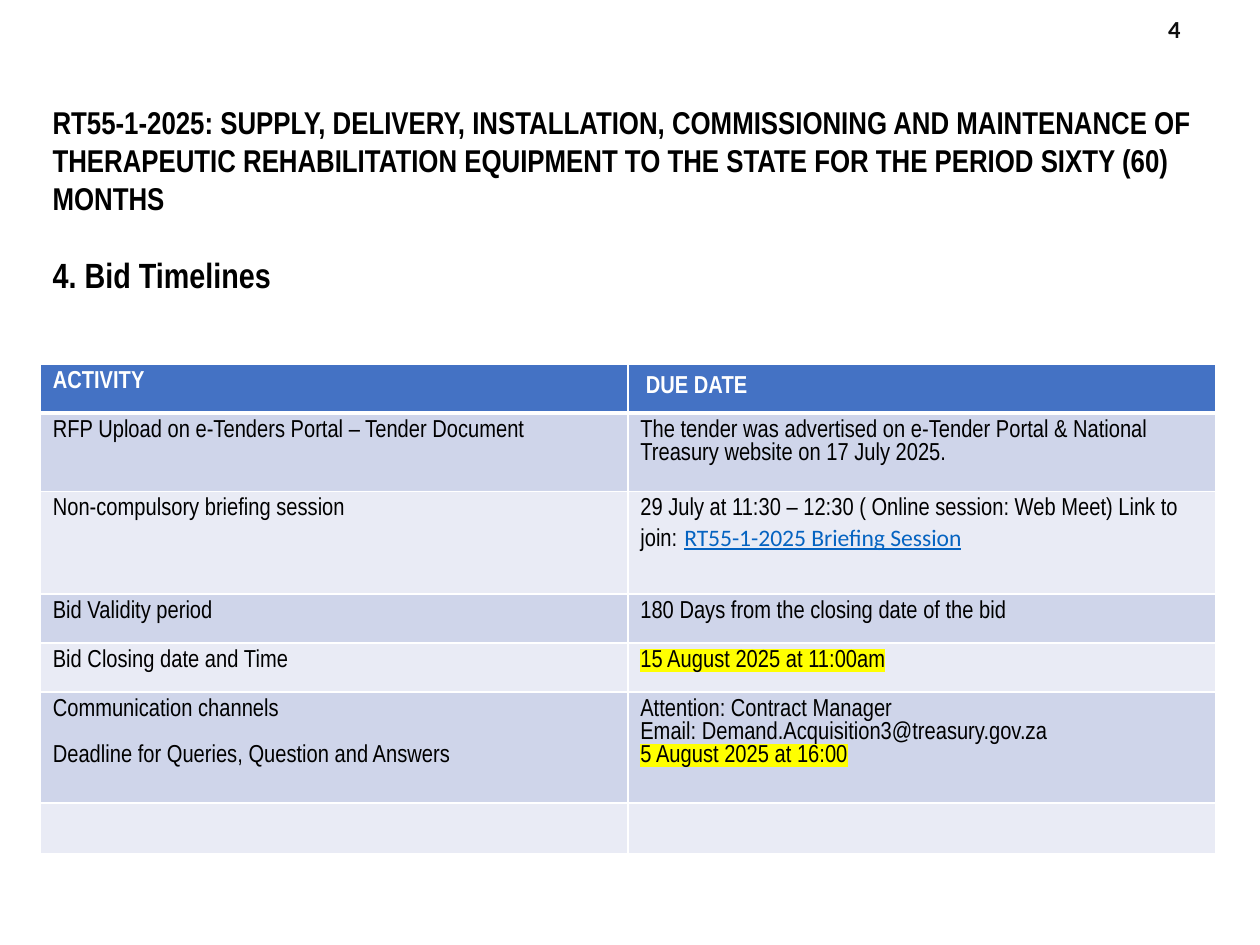
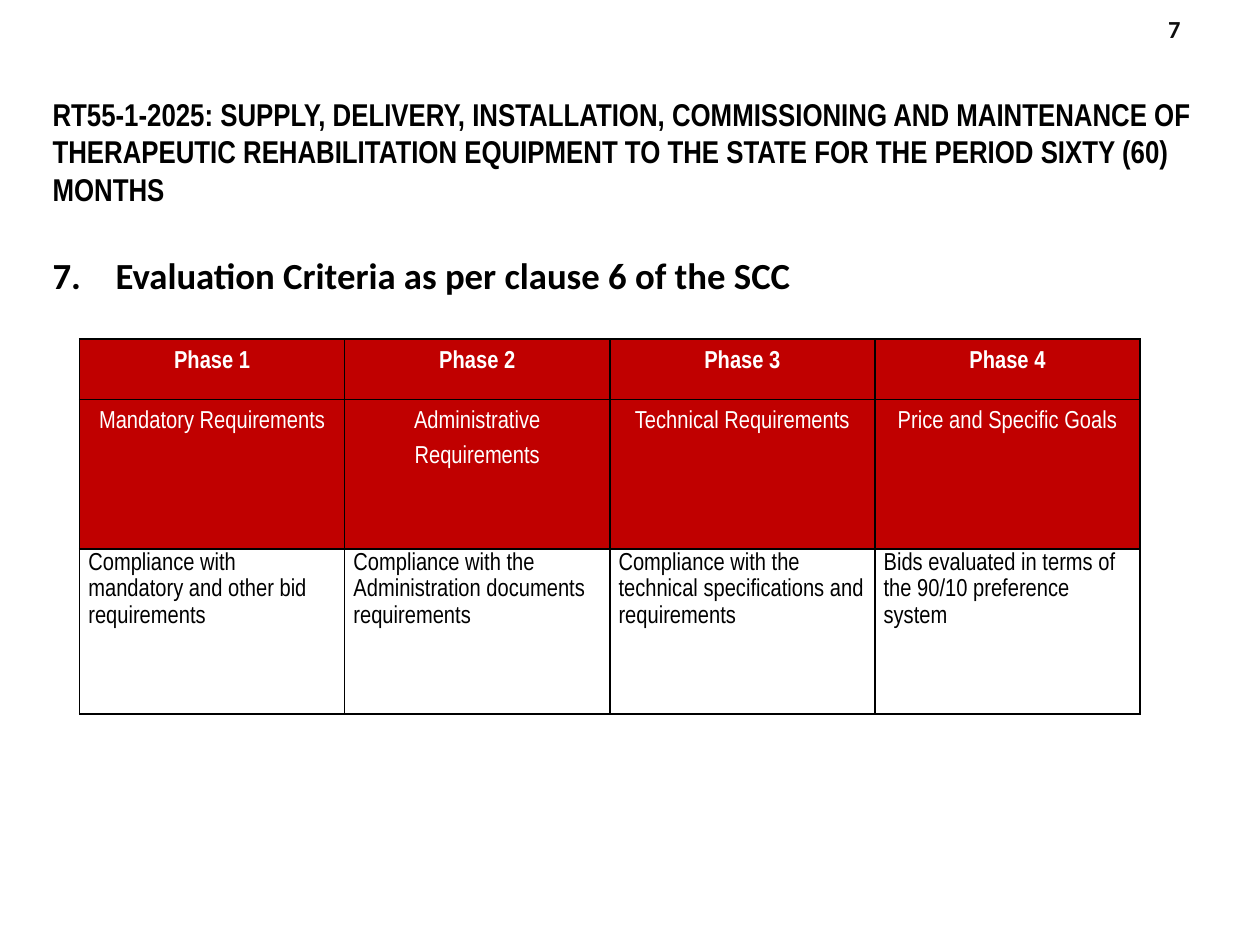
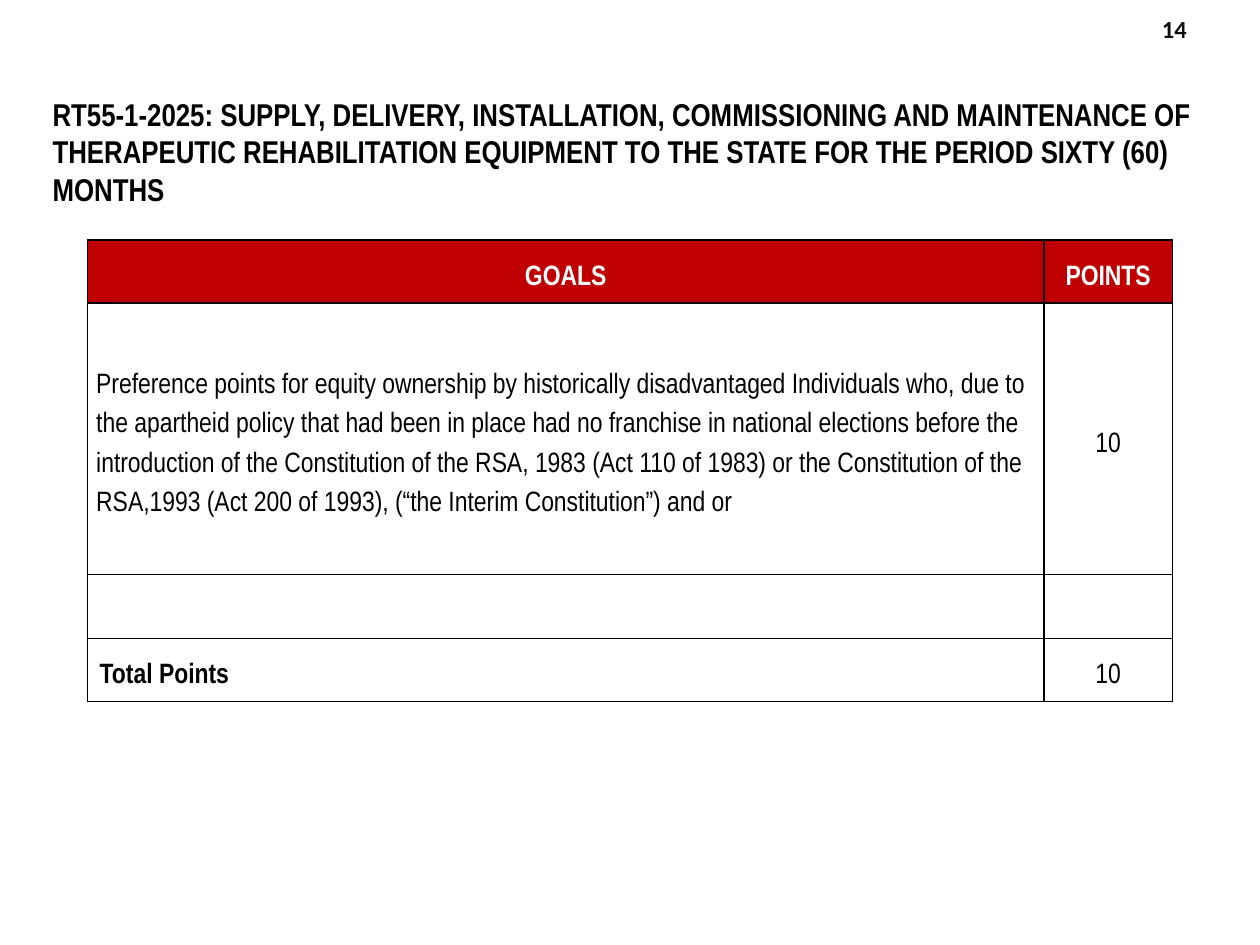
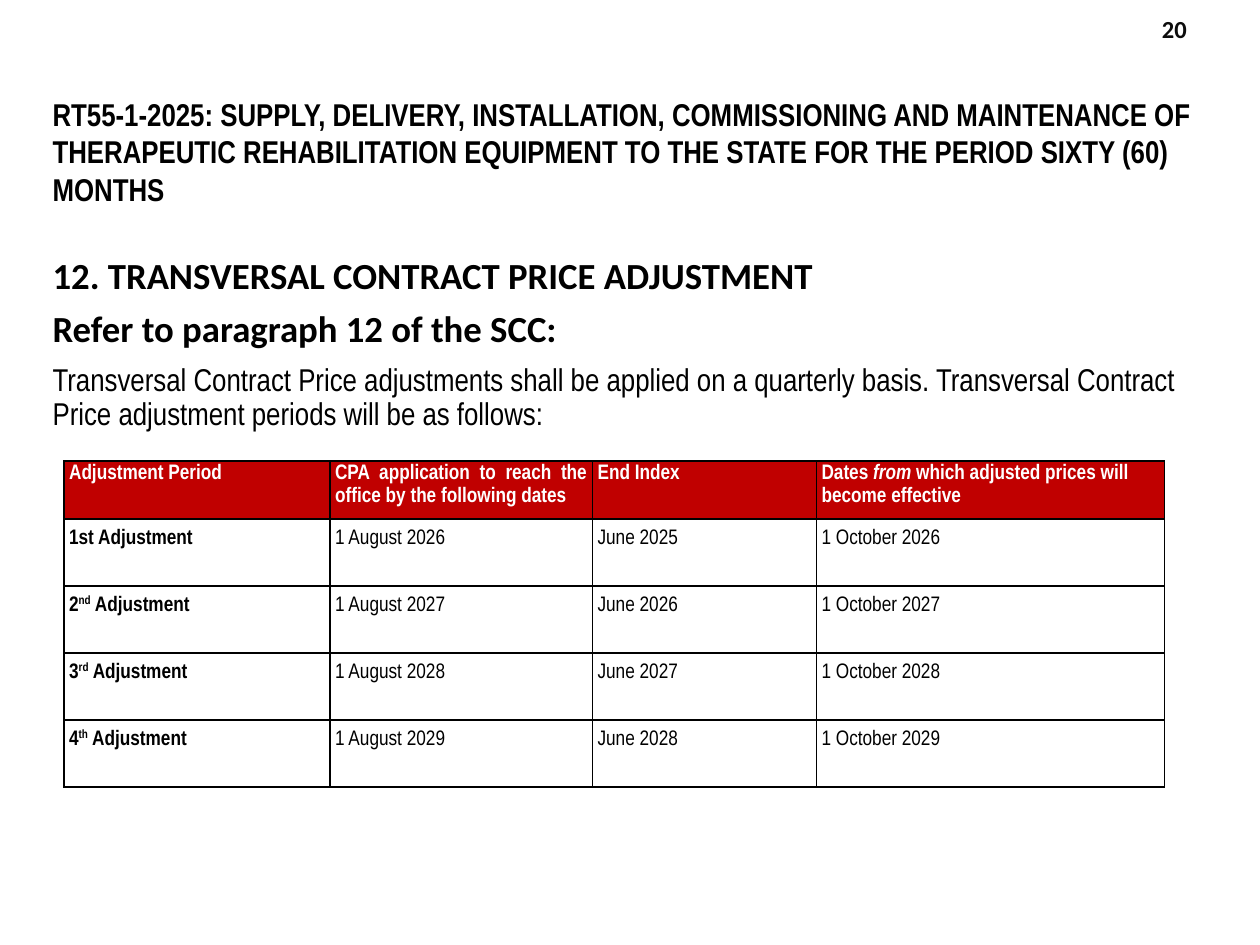
from lxml import etree
from pptx import Presentation
from pptx.dml.color import RGBColor
from pptx.enum import text
from pptx.oxml.ns import qn
from pptx.util import Pt

# Shared look
BLACK, WHITE, INK, RED = "000000", "FFFFFF", "0D0D0D", "C00000"
BLUE, DARK, PALE, LINK, YELLOW = "4472C4", "CFD5EA", "E9EBF5", "0563C1", "FFFF00"
NARROW, SANS = "Arial Narrow", "Calibri"
LEFT, CENTER, JUST = text.PP_ALIGN.LEFT, text.PP_ALIGN.CENTER, text.PP_ALIGN.JUSTIFY
TOP, MIDDLE = text.MSO_ANCHOR.TOP, text.MSO_ANCHOR.MIDDLE
EDGE, WIDE = 23, 672.5

TITLE = ("RT55-1-2025: SUPPLY, DELIVERY, INSTALLATION, COMMISSIONING AND MAINTENANCE OF "
         "THERAPEUTIC REHABILITATION EQUIPMENT TO THE STATE FOR THE PERIOD SIXTY (60) MONTHS")
HEAD = dict(size=21, font=SANS, bold=True)
MARK = dict(mark=YELLOW)


# Content: a cell is a list of paragraphs, a paragraph a list of (text, style) runs
def para(words, **style):
    return [(words, style)]


def rank(num, end):
    """An adjustment label with a raised ordinal ending."""
    return [[(num, dict(bold=True)), (end, dict(bold=True, raised=True)),
             (" Adjustment", dict(bold=True))]]


TIMES = [
    ["ACTIVITY", [[(" ", dict(font=SANS)), ("DUE DATE", {})]]],
    ["RFP Upload on e-Tenders Portal – Tender Document",
     "The tender was advertised on e-Tender Portal & National Treasury website "
     "on 17 July 2025."],
    ["Non-compulsory briefing session",
     [[("29 July at 11:30 – 12:30 ( Online session: Web Meet) Link to join:", {}),
       (" ", dict(size=16, font="Roboto")),
       ("RT55-1-2025 Briefing Session", dict(size=13.5, font=SANS, color=LINK, line=True))]]],
    ["Bid Validity period", "180 Days from the closing date of the bid"],
    ["Bid Closing date and Time", [para("15 August 2025 at 11:00am", **MARK)]],
    [[para("Communication channels"), para("Deadline for Queries, Question and Answers")],
     [para("Attention: Contract Manager"),
      para("Email: Demand.Acquisition3@treasury.gov.za"),
      para("5 August 2025 at 16:00", **MARK)]],
    ["", ""],
]

PHASES = [
    ["Phase 1", "Phase 2", "Phase 3", "Phase 4"],
    ["Mandatory Requirements", "Administrative Requirements",
     "Technical Requirements", "Price and Specific Goals"],
    ["Compliance with mandatory and other bid requirements",
     "Compliance with the Administration documents requirements",
     "Compliance with the technical specifications and requirements",
     "Bids evaluated in terms of the 90/10 preference system"],
]

GOALS = [
    ["GOALS", "POINTS"],
    ["Preference points for equity ownership by historically disadvantaged Individuals who, "
     "due to the apartheid policy that had been in place had no franchise in national "
     "elections before the introduction of the Constitution of the RSA, 1983 (Act 110 of "
     "1983) or the Constitution of the RSA,1993 (Act 200 of 1993), (“the Interim "
     "Constitution”) and or", "10"],
    ["", ""],
    [[para("Total Points", bold=True)], "10"],
]

PRICES = [
    ["Adjustment Period", "CPA application to reach the office by the following dates",
     "End Index",
     [[("Dates ", {}), ("from", dict(slant=True)),
       (" which adjusted prices will become effective", {})]]],
    [[para("1st Adjustment", bold=True)], "1 August 2026", "June 2025", "1 October 2026"],
    [rank("2", "nd"), "1 August 2027", "June 2026", "1 October 2027"],
    [rank("3", "rd"), "1 August 2028", "June 2027", "1 October 2028"],
    [rank("4", "th"), "1 August 2029", "June 2028", "1 October 2029"],
]

RULES = [
    para("12. TRANSVERSAL CONTRACT PRICE ADJUSTMENT", **HEAD),
    para("Refer to paragraph 12 of the SCC:", **HEAD),
    para("Transversal Contract Price adjustments shall be applied on a quarterly basis. "
         "Transversal Contract Price adjustment periods will be as follows:", size=18),
]


# Drawing
def rgb(code):
    return RGBColor.from_string(code)


def add_run(par, words, size=14, font=NARROW, color=BLACK, bold=False, slant=False,
            line=False, raised=False, mark=None):
    run = par.add_run()
    run.text = words
    face = run.font
    face.size, face.name, face.bold, face.italic = Pt(size), font, bold, slant
    face.underline = line
    face.color.rgb = rgb(color)
    props = run._r.get_or_add_rPr()
    if raised:
        props.set("baseline", "30000")
    if mark:
        glow = etree.Element(qn("a:highlight"))
        etree.SubElement(glow, qn("a:srgbClr"), val=mark)
        props.find(qn("a:solidFill")).addnext(glow)


def write(frame, paras, base=None, align=LEFT, space=1.0, gap=0):
    """Fill a text frame; base styles every run, gap parts the paragraphs."""
    for i, runs in enumerate(paras):
        par = frame.add_paragraph() if i else frame.paragraphs[0]
        par.alignment, par.line_spacing = align, space
        par.space_before = Pt(gap if i else 0)
        for words, style in runs:
            add_run(par, words, **{**(base or {}), **style})


def add_box(slide, x, y, w, h, anchor=TOP, pad=3.6):
    frame = slide.shapes.add_textbox(Pt(x), Pt(y), Pt(w), Pt(h)).text_frame
    frame.word_wrap, frame.vertical_anchor = True, anchor
    frame.margin_top = Pt(pad)
    return frame


def add_page(deck, num, head=None):
    """A slide with its number and the tender title, and a heading below if given."""
    slide = deck.slides.add_slide(deck.slide_layouts[6])
    frame = add_box(slide, 655, 0, 32, 32.5, MIDDLE)
    frame.margin_left = frame.margin_right = 0
    write(frame, [para(str(num), font=SANS, color=INK, bold=True)], align=CENTER)
    lines = [para(TITLE, size=18, bold=True)]
    if head:
        lines.append(para(head, size=20, bold=True))
    frame = add_box(slide, EDGE, 49, WIDE, 80 if head else 74, pad=10 if head else 5)
    write(frame, lines, gap=21)
    return slide


def add_body(slide, paras):
    frame = add_box(slide, EDGE, 144, WIDE, 379.5)
    write(frame, paras, space=0.9, gap=7.5)
    return frame


def add_rules(cell, color, top=1, bottom=1):
    """Draw the four borders of a cell."""
    props = cell._tc.get_or_add_tcPr()
    sides = dict(lnL=1, lnR=1, lnT=top, lnB=bottom)
    for i, (side, width) in enumerate(sides.items()):
        edge = etree.Element(qn("a:" + side), w=str(Pt(width)))
        fill = etree.SubElement(edge, qn("a:solidFill"))
        etree.SubElement(fill, qn("a:srgbClr"), val=color)
        props.insert(i, edge)


def add_grid(slide, x, y, cols, rows, data, look, rule=BLACK, heavy=1, pads=(5, 0)):
    """Add a table; look(row, col) gives fill, run style and paragraph options."""
    frame = slide.shapes.add_table(len(rows), len(cols), Pt(x), Pt(y),
                                   Pt(sum(cols)), Pt(sum(rows)))
    grid = frame.table
    grid.first_row = grid.horz_banding = False
    for col, width in zip(grid.columns, cols):
        col.width = Pt(width)
    for r, (line, height) in enumerate(zip(data, rows)):
        grid.rows[r].height = Pt(height)
        for c, words in enumerate(line):
            cell = grid.cell(r, c)
            fill, base, opts = look(r, c)
            cell.margin_left = cell.margin_right = Pt(pads[0])
            cell.margin_top = cell.margin_bottom = Pt(pads[1])
            if fill:
                cell.fill.solid()
                cell.fill.fore_color.rgb = rgb(fill)
            else:
                cell.fill.background()
            add_rules(cell, rule, heavy if r == 1 else 1, heavy if r == 0 else 1)
            if words:
                paras = [para(words)] if isinstance(words, str) else words
                write(cell.text_frame, paras, base, **opts)
    return grid


def time_look(r, c):
    if r == 0:
        return BLUE, dict(color=WHITE, bold=True), {}
    # The left column leaves one line free between its two paragraphs
    return (DARK if r % 2 else PALE), {}, dict(gap=0 if c else 13)


def phase_look(r, c):
    if r < 2:
        return RED, dict(color=WHITE, bold=r == 0), dict(align=CENTER, space=1.5)
    return None, {}, dict(space=1.15)


def goal_look(r, c):
    opts = dict(align=LEFT if r and not c else CENTER, space=1.5)
    if r == 0:
        return RED, dict(size=16, color=WHITE, bold=True), opts
    return None, dict(size=16), opts


def price_look(r, c):
    if r == 0:
        return (RED, dict(size=12, color=WHITE, bold=True),
                dict(align=LEFT if c == 3 else JUST, space=1.15))
    return None, dict(size=12), dict(align=JUST, space=1.5)


def main():
    deck = Presentation()
    deck.slide_width, deck.slide_height = Pt(720), Pt(540)

    slide = add_page(deck, 4, "4. Bid Timelines")
    add_grid(slide, EDGE, 208, [335.75] * 2, [28, 45, 58.5, 28, 28, 63.5, 28],
             TIMES, time_look, WHITE, 3, (7.2, 3.6))

    slide = add_page(deck, 7)
    frame = add_body(slide, [para("Evaluation Criteria as per clause 6 of the SCC", **HEAD)])
    props = frame.paragraphs[0]._p.get_or_add_pPr()
    props.set("marL", str(Pt(36)))
    props.set("indent", str(Pt(-36)))
    etree.SubElement(props, qn("a:buFont"), typeface=SANS)
    etree.SubElement(props, qn("a:buAutoNum"), type="arabicPeriod", startAt="7")
    add_grid(slide, 45.5, 193.75, [151.5] * 4, [34.5, 85.5, 94.25], PHASES, phase_look)

    slide = add_page(deck, 14)
    grid = add_grid(slide, 50, 137.25, [546.5, 73.5], [36, 155, 36.5, 36], GOALS, goal_look)
    for cell in grid.iter_cells():
        cell.vertical_anchor = MIDDLE
    grid.cell(3, 0).margin_left = Pt(7)

    slide = add_page(deck, 20)
    add_body(slide, RULES)
    add_grid(slide, 36.5, 263.5, [152, 150, 128, 199], [33] + [38.25] * 4,
             PRICES, price_look, pads=(3, 0))

    deck.save("out.pptx")


if __name__ == "__main__":
    main()
